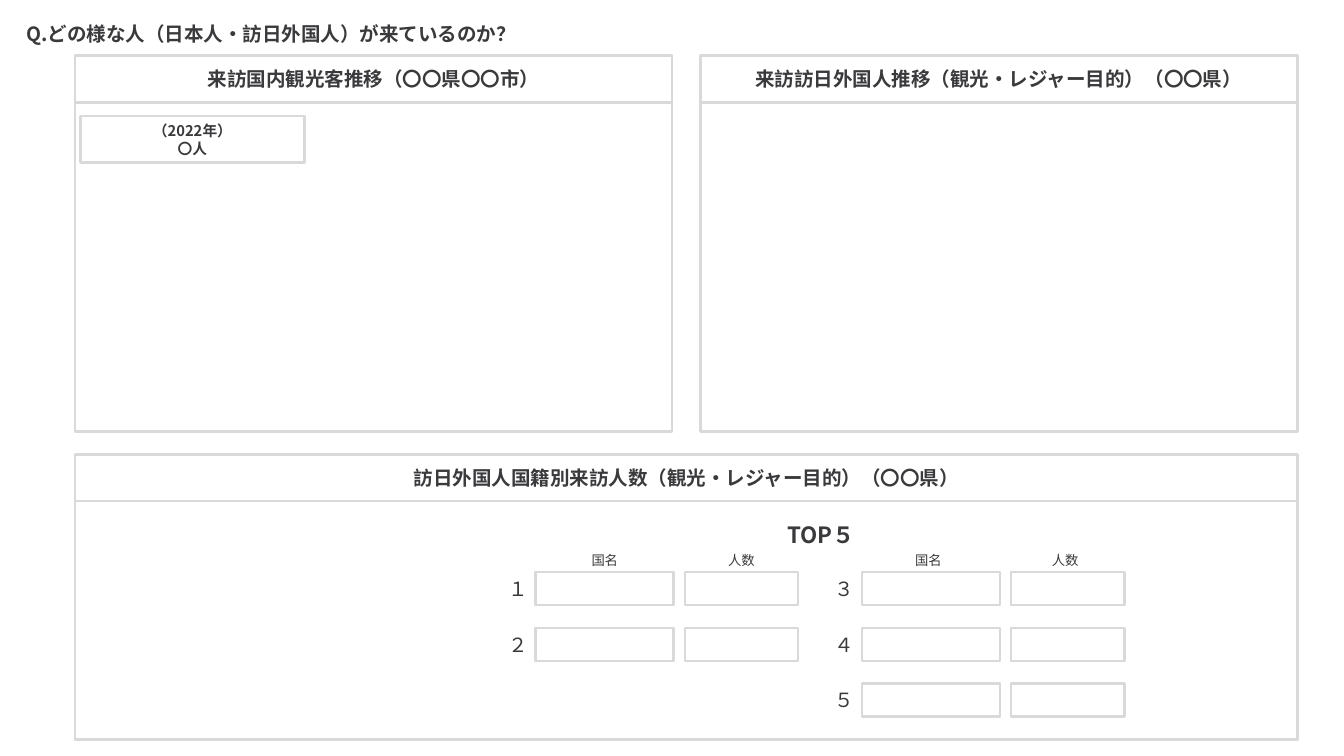
from lxml import etree
from pptx import Presentation
from pptx.dml.color import RGBColor
from pptx.enum.shapes import MSO_SHAPE
from pptx.enum.text import MSO_ANCHOR, MSO_AUTO_SIZE, PP_ALIGN
from pptx.oxml.ns import qn
from pptx.util import Inches, Pt

RECTANGLE = MSO_SHAPE.RECTANGLE
MIDDLE = MSO_ANCHOR.MIDDLE
NO_AUTOFIT = MSO_AUTO_SIZE.NONE
LEFT, CENTER = PP_ALIGN.LEFT, PP_ALIGN.CENTER

FONT = "Noto Sans CJK JP"
INK, BORDER = "3A3A3D", "D9D9D9"
BODY_SIZE, SMALL_SIZE, LABEL_SIZE, TOP_SIZE = 15.4, 11.6, 10.5, 17.6

PANEL_LEFT, PANEL_WIDTH, PANEL_PITCH = 0.82, 6.53, 6.84
FULL_WIDTH = PANEL_PITCH + PANEL_WIDTH
HEADER_HEIGHT = 0.51
RANK_TOP, RANK_PITCH, RANK_HEIGHT = 6.26, 0.61, 0.36
NUMBER_WIDTH = 0.36
LABEL_TOP = 5.95
FIELDS = (("国名", 0.37, 1.51), ("人数", 2.0, 1.24))
RANK_COLUMNS = ((5.49, 0, "１２"), (9.06, -0.03, "３４５"))


def color(hex_value):
    """Turn a hex string into a colour."""
    return RGBColor.from_string(hex_value)


def write(shape, lines, size, bold=False, align=CENTER, margin=0):
    """Fill a shape with one paragraph per line."""
    frame = shape.text_frame
    frame.text = "\n".join(lines)
    frame.word_wrap = True
    frame.auto_size = NO_AUTOFIT
    frame.vertical_anchor = MIDDLE
    frame.margin_left = frame.margin_right = Inches(margin)
    frame.margin_top = frame.margin_bottom = 0
    for paragraph in frame.paragraphs:
        paragraph.alignment = align
        paragraph.line_spacing = 1.0
        font = paragraph.font
        font.name, font.size, font.bold = FONT, Pt(size), bold
        font.color.rgb = color(INK)
        defaults = paragraph._p.pPr.find(qn("a:defRPr"))
        etree.SubElement(defaults, qn("a:ea"), typeface=FONT)


def add_frame(slide, left, top, width, height):
    """Draw an unfilled rectangle with a grey border."""
    shape = slide.shapes.add_shape(
        RECTANGLE, Inches(left), Inches(top), Inches(width), Inches(height))
    shape.shadow.inherit = False
    shape.fill.background()
    shape.line.color.rgb = color(BORDER)
    shape.line.width = Pt(2)
    return shape


def add_text(slide, left, top, width, height, text, size, bold=False):
    """Add a centred text box."""
    box = slide.shapes.add_textbox(
        Inches(left), Inches(top), Inches(width), Inches(height))
    write(box, [text], size, bold)


def add_title(slide, text):
    """Place and format the slide title."""
    title = slide.shapes.title
    title.left, title.top = Inches(0.19), Inches(0.11)
    title.width, title.height = Inches(PANEL_WIDTH), Inches(HEADER_HEIGHT)
    write(title, [text], BODY_SIZE, True, LEFT, 0.1)


def add_panel(slide, left, top, width, body_height, heading):
    """Add a heading bar with an empty body below it."""
    header = add_frame(slide, left, top, width, HEADER_HEIGHT)
    write(header, [heading], BODY_SIZE, True)
    add_frame(slide, left, top + HEADER_HEIGHT, width, body_height)


def add_rank_column(slide, left, label_shift, numbers):
    """Add field labels and one row of entry boxes per rank."""
    for label, offset, width in FIELDS:
        add_text(slide, left + offset + label_shift, LABEL_TOP, width,
                 RANK_HEIGHT, label, LABEL_SIZE)
    for row, number in enumerate(numbers):
        top = RANK_TOP + row * RANK_PITCH
        add_text(slide, left, top, NUMBER_WIDTH, RANK_HEIGHT, number, BODY_SIZE)
        for _, offset, width in FIELDS:
            add_frame(slide, left + offset, top, width, RANK_HEIGHT)


def main():
    """Build and save the visitor slide."""
    presentation = Presentation()
    presentation.slide_width = Inches(14.7)
    presentation.slide_height = Inches(8.27)
    slide = presentation.slides.add_slide(presentation.slide_layouts[5])

    add_title(slide, "Q.どの様な人（日本人・訪日外国人）が来ているのか？")
    headings = ("来訪国内観光客推移（〇〇県〇〇市）",
                "来訪訪日外国人推移（観光・レジャー目的）（〇〇県）")
    for column, heading in enumerate(headings):
        add_panel(slide, PANEL_LEFT + column * PANEL_PITCH, 0.61,
                  PANEL_WIDTH, 3.6, heading)
    total = add_frame(slide, 0.88, 1.27, 2.45, HEADER_HEIGHT)
    write(total, ["（2022年）", "〇人"], SMALL_SIZE, True)

    add_panel(slide, PANEL_LEFT, 4.97, FULL_WIDTH, 2.61,
              "訪日外国人国籍別来訪人数（観光・レジャー目的）（〇〇県）")
    add_text(slide, 8.36, 5.67, 1.24, RANK_HEIGHT, "TOP５", TOP_SIZE, True)
    for left, label_shift, numbers in RANK_COLUMNS:
        add_rank_column(slide, left, label_shift, numbers)

    presentation.save("out.pptx")


if __name__ == "__main__":
    main()
